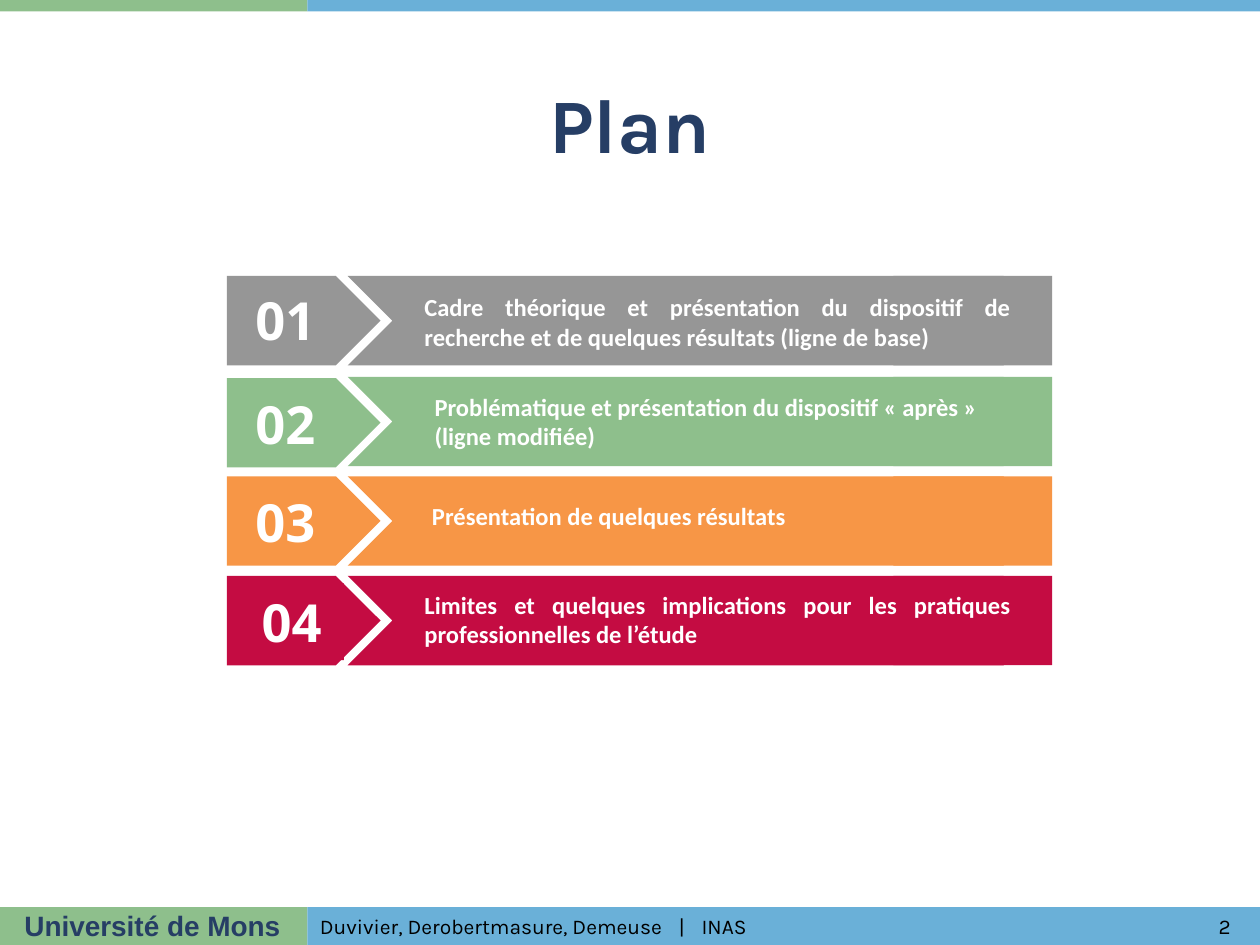
from lxml.etree import SubElement
from pptx import Presentation
from pptx.dml.color import RGBColor
from pptx.enum.shapes import MSO_SHAPE
from pptx.enum.text import MSO_ANCHOR, PP_ALIGN
from pptx.oxml.ns import qn
from pptx.util import Inches, Pt

COLORS = {"green": "8EBF8C", "blue": "6AB0D8", "navy": "263E65", "grey": "969696",
          "orange": "F79646", "red": "C40C42", "white": "FFFFFF", "black": "000000"}
FORMATS = {
    "title": {"name": "Karla", "size": Pt(44), "bold": True, "color": "navy"},
    "brand": {"name": "Arial", "size": Pt(16), "bold": True, "color": "navy"},
    "footer": {"name": "Karla", "size": Pt(12), "bold": False, "color": "black"},
    "number": {"name": "Open Sans", "size": Pt(30), "bold": True, "color": "white"},
    "item": {"name": "Calibri", "size": Pt(14), "bold": True, "color": "white"},
}
COLUMNS, ROWS = 100, 75  # grid over the whole slide


class PlanSlide:
    """Holds the grid, the style and the slide being drawn."""

    def __init__(self, deck):
        self.column = deck.slide_width / COLUMNS
        self.row = deck.slide_height / ROWS
        self.slide = deck.slides.add_slide(deck.slide_layouts[5])

    def area(self, left, top, width, height):
        return (round(left * self.column), round(top * self.row),
                round(width * self.column), round(height * self.row))

    def paint(self, shape, color):
        shape.fill.solid()
        shape.fill.fore_color.rgb = RGBColor.from_string(COLORS[color])

    def block(self, kind, color, *place, parent=None):
        shape = (parent or self.slide).shapes.add_shape(kind, *self.area(*place))
        shape.shadow.inherit = False
        self.paint(shape, color)
        shape.line.fill.background()

    def set_words(self, box, words, style, align, anchor, tabs=()):
        frame = box.text_frame
        frame.word_wrap = True
        frame.vertical_anchor = anchor
        para = frame.paragraphs[0]
        para.text = words
        para.alignment = align
        if tabs:
            stops = SubElement(para._p.get_or_add_pPr(), qn("a:tabLst"))
            for stop in tabs:
                SubElement(stops, qn("a:tab"), pos=str(Inches(stop)), algn="l")
        for key, value in FORMATS[style].items():
            if key == "color":
                para.font.color.rgb = RGBColor.from_string(COLORS[value])
            else:
                setattr(para.font, key, value)

    def text(self, words, style, *place, align=PP_ALIGN.LEFT,
             anchor=MSO_ANCHOR.TOP, fill=None, tabs=()):
        box = self.slide.shapes.add_textbox(*self.area(*place))
        if fill:
            self.paint(box, fill)
        self.set_words(box, words, style, align, anchor, tabs)

    def title(self, words, *place):
        box = self.slide.shapes.title
        box.left, box.top, box.width, box.height = self.area(*place)
        self.set_words(box, words, "title", PP_ALIGN.CENTER, MSO_ANCHOR.MIDDLE)

    def banner(self, color, plate_top, band_top):
        self.block(MSO_SHAPE.PENTAGON, color, 18, plate_top, 12.2, 7.1)
        band = self.slide.shapes.add_group_shape()
        self.block(MSO_SHAPE.CHEVRON, color, 27.6, band_top, 55.6, 7.1, parent=band)
        self.block(MSO_SHAPE.RECTANGLE, color, 70.9, band_top, 12.6, 7.1, parent=band)


def main():
    deck = Presentation()
    deck.slide_width, deck.slide_height = Inches(10), Inches(7.5)
    plan = PlanSlide(deck)

    # Top and bottom bars
    for top, height in ((0, 0.9), (72, 3)):
        plan.block(MSO_SHAPE.RECTANGLE, "green", 0, top, 24.4, height)
        plan.block(MSO_SHAPE.RECTANGLE, "blue", 24.4, top, 75.6, height)

    # Title
    plan.title("Plan", 5, 3.5, 90, 12.5)

    # Numbered items: colour, plate top, band top, number place,
    # text place, alignment, backing, words
    items = (
        ("grey", 21.9, 21.9, (18.5, 22.4), (32.7, 22.7, 48.5, 5.7), PP_ALIGN.JUSTIFY, False,
         "Cadre théorique et présentation du dispositif de recherche "
         "et de quelques résultats (ligne de base)"),
        ("green", 30, 29.9, (18.5, 30.6), (33.5, 30.6, 48.5, 5.7), PP_ALIGN.LEFT, False,
         "Problématique et présentation du dispositif « après » (ligne modifiée)"),
        ("orange", 37.8, 37.8, (18.5, 38.4), (33.3, 39.3, 48.5, 3.4), PP_ALIGN.JUSTIFY, True,
         "Présentation de quelques résultats"),
        ("red", 45.7, 45.7, (19, 46.3), (32.7, 46.3, 48.5, 5.7), PP_ALIGN.JUSTIFY, True,
         "Limites et quelques implications pour les pratiques "
         "professionnelles de l’étude"),
    )
    for index, (color, plate, band, number, place, align, backed, words) in enumerate(items, 1):
        fill = color if backed else None
        plan.banner(color, plate, band)
        plan.text(f"{index:02}", "number", *number, 8.3, 6.1,
                  align=PP_ALIGN.CENTER, fill=fill)
        plan.text(words, "item", *place, align=align, fill=fill)

    # Footer
    plan.text("Université de Mons", "brand", -0.1, 71.6, 24.4, 3.7, align=PP_ALIGN.CENTER)
    plan.text("Duvivier, Derobertmasure, Demeuse\t|\tINAS", "footer", 24.4, 72, 70, 3,
              anchor=MSO_ANCHOR.MIDDLE, tabs=(2.85, 3.03))
    plan.text("2", "footer", 94.4, 72, 5.6, 3,
              align=PP_ALIGN.CENTER, anchor=MSO_ANCHOR.MIDDLE)

    deck.save("out.pptx")


if __name__ == "__main__":
    main()
